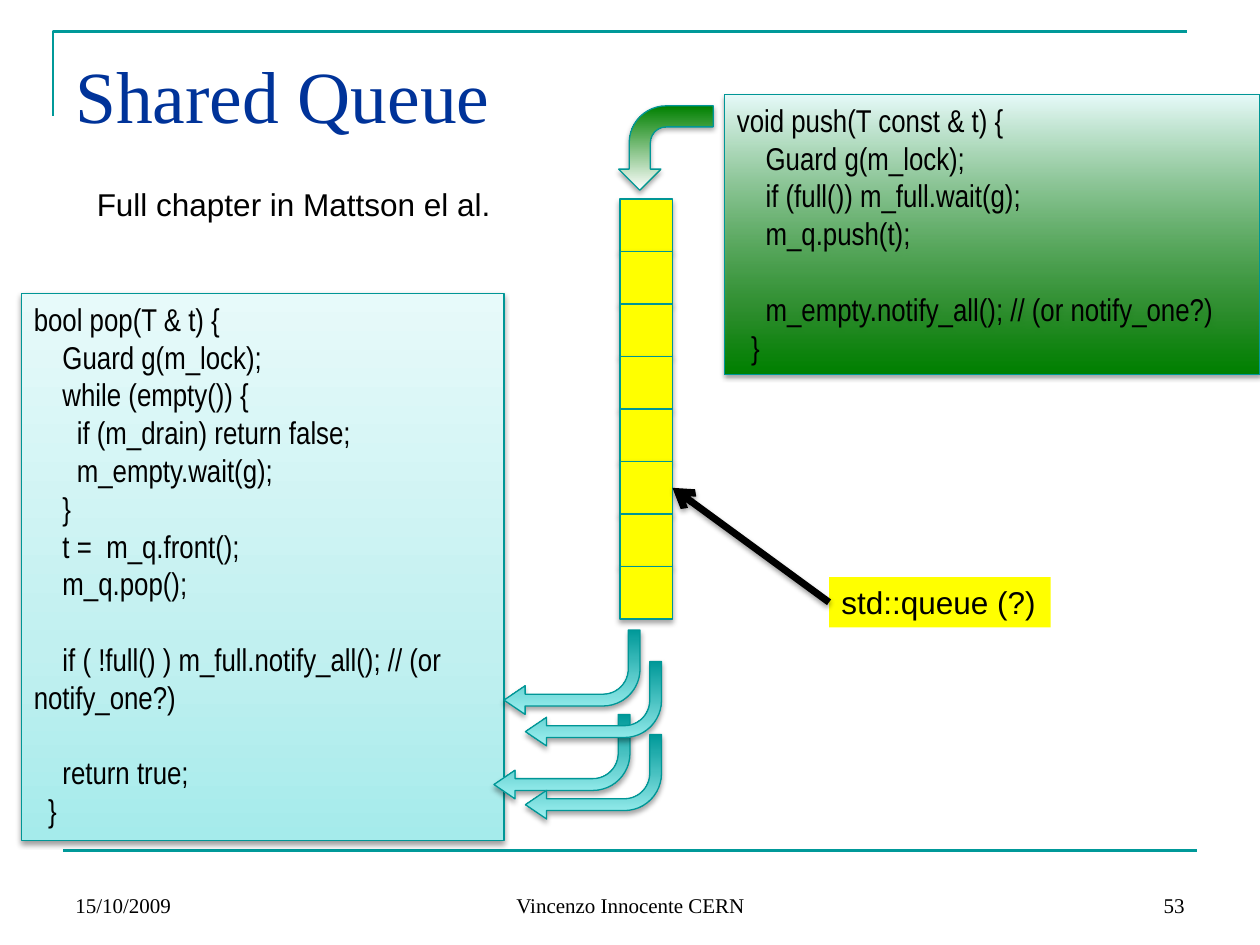
from dataclasses import dataclass

from lxml import etree
from pptx import Presentation
from pptx.dml.color import RGBColor
from pptx.enum.shapes import MSO_CONNECTOR as Connector, MSO_SHAPE as Preset
from pptx.enum.text import MSO_ANCHOR as Anchor, PP_ALIGN as Align
from pptx.oxml.ns import qn
from pptx.util import Inches, Pt

TEAL = RGBColor(0x00, 0x99, 0x99)
EDGE = RGBColor(0x00, 0x96, 0x96)
NAVY = RGBColor(0x00, 0x33, 0x99)
BLACK = RGBColor(0x00, 0x00, 0x00)
WHITE = RGBColor(0xFF, 0xFF, 0xFF)
YELLOW = RGBColor(0xFF, 0xFF, 0x00)
GREEN = RGBColor(0x00, 0x80, 0x00)
ICE = RGBColor(0xE7, 0xFA, 0xFA)
AQUA = RGBColor(0xA5, 0xEB, 0xEB)
PALE_AQUA = RGBColor(0xC1, 0xF0, 0xF0)
LIGHT_TEAL = RGBColor(0x9F, 0xF1, 0xF1)

SERIF, SANS, NARROW = "Times New Roman", "Arial", "Arial Narrow"

PUSH_CODE = """void push(T const & t) {
    Guard g(m_lock);
    if (full()) m_full.wait(g);
    m_q.push(t);

    m_empty.notify_all(); // (or notify_one?)
  }"""
POP_CODE = """bool pop(T & t) {
    Guard g(m_lock);
    while (empty()) {
      if (m_drain) return false;
      m_empty.wait(g);
    }
    t =  m_q.front();
    m_q.pop();

    if ( !full() ) m_full.notify_all(); // (or notify_one?)

    return true;
  }"""


@dataclass
class Frame:
    left: float
    top: float
    width: float
    height: float

    def lengths(self) -> list:
        return [Inches(n) for n in (self.left, self.top, self.width, self.height)]


@dataclass
class Stop:
    percent: int
    color: RGBColor
    alpha: int = 100


@dataclass
class Label:
    text: str
    frame: Frame
    size: int
    font: str
    color: RGBColor = BLACK
    align: Align = Align.LEFT
    anchor: Anchor = Anchor.TOP
    wrap: bool = True


def add_color(parent, color: RGBColor, alpha: int) -> None:
    node = etree.SubElement(parent, qn("a:srgbClr"), val=str(color))
    if alpha < 100:
        etree.SubElement(node, qn("a:alpha"), val=str(alpha * 1000))


def set_gradient(shape, stops: list[Stop], angle: int) -> None:
    shape.fill.background()
    empty = shape._element.spPr.find(qn("a:noFill"))
    gradient = etree.Element(qn("a:gradFill"), rotWithShape="1")
    stop_list = etree.SubElement(gradient, qn("a:gsLst"))
    for stop in stops:
        node = etree.SubElement(stop_list, qn("a:gs"), pos=str(stop.percent * 1000))
        add_color(node, stop.color, stop.alpha)
    etree.SubElement(gradient, qn("a:lin"), ang=str(angle * 60000), scaled="0")
    empty.getparent().replace(empty, gradient)


def set_shadow(properties, alpha: int, distance: float) -> None:
    effects = properties.find(qn("a:effectLst"))
    if effects is None:
        effects = etree.SubElement(properties, qn("a:effectLst"))
    shadow = etree.SubElement(effects, qn("a:outerShdw"), blurRad=str(Pt(3.1)),
                              dist=str(Pt(distance)), dir="5400000", rotWithShape="0")
    add_color(shadow, BLACK, alpha)


def add_outlined(shapes, preset: Preset, frame: Frame, alpha: int = 35, distance: float = 1.8):
    shape = shapes.add_shape(preset, *frame.lengths())
    shape.line.color.rgb = EDGE
    shape.line.width = Pt(0.75)
    shape.shadow.inherit = False
    set_shadow(shape._element.spPr, alpha, distance)
    return shape


def write(shape, label: Label) -> None:
    text_frame = shape.text_frame
    text_frame.word_wrap = label.wrap
    text_frame.vertical_anchor = label.anchor
    text_frame.text = label.text
    for para in text_frame.paragraphs:
        para.alignment = label.align
        para.font.size = Pt(label.size)
        for span in para.runs:
            span.font.size = Pt(label.size)
            span.font.name = label.font
            span.font.color.rgb = label.color


def add_label(page, label: Label):
    box = page.shapes.add_textbox(*label.frame.lengths())
    write(box, label)
    return box


def add_code(page, code: str, frame: Frame, stops: list[Stop]) -> None:
    box = add_outlined(page.shapes, Preset.RECTANGLE, frame, 38, 1.6)
    set_gradient(box, stops, 270)
    write(box, Label(code, frame, 18, NARROW))


def add_line(page, start: tuple, end: tuple, color: RGBColor, width: float):
    line = page.shapes.add_connector(Connector.STRAIGHT, *[Inches(n) for n in start + end])
    line.line.color.rgb = color
    line.line.width = Pt(width)
    etree.SubElement(line._element.spPr, qn("a:effectLst"))
    return line


def main() -> None:
    deck = Presentation()
    deck.slide_width, deck.slide_height = Inches(10), Inches(7.5)
    page = deck.slides.add_slide(deck.slide_layouts[6])

    # Corner rule, bottom rule, title and footer
    builder = page.shapes.build_freeform(Inches(0.42), Inches(0.92))
    builder.add_line_segments([(Inches(0.42), Inches(0.25)), (Inches(9.42), Inches(0.25))],
                              close=False)
    corner = builder.convert_to_shape()
    corner.fill.background()
    corner.line.color.rgb = TEAL
    corner.line.width = Pt(1.5)
    corner.shadow.inherit = False
    add_line(page, (0.5, 6.75), (9.5, 6.75), TEAL, 1.5)
    title = add_label(page, Label("Shared Queue", Frame(0.5, 0.3, 9, 1.25), 42, SERIF, NAVY))
    title.text_frame.margin_top = Inches(0.1)
    for text, left, width, align in (
        ("15/10/2009", 0.5, 2.33, Align.LEFT),
        ("Vincenzo Innocente CERN", 3.42, 3.17, Align.CENTER),
        ("53", 7.17, 2.33, Align.RIGHT),
    ):
        add_label(page, Label(text, Frame(left, 6.83, width, 0.5), 12, SERIF,
                              align=align, anchor=Anchor.BOTTOM))

    # Code blocks
    add_code(page, PUSH_CODE, Frame(5.75, 0.75, 4.25, 2.22),
             [Stop(0, GREEN), Stop(21, GREEN, 76), Stop(100, ICE)])
    add_code(page, POP_CODE, Frame(0.17, 2.33, 3.83, 4.34),
             [Stop(0, AQUA), Stop(35, PALE_AQUA), Stop(100, ICE)])

    # Queue cells
    queue = page.shapes.add_group_shape()
    pitch = 5 / 12
    cells = []
    for row in range(8):
        frame = Frame(4.92, 1.58 + row * pitch, pitch, pitch)
        cell = add_outlined(queue.shapes, Preset.RECTANGLE, frame)
        cell.fill.solid()
        cell.fill.fore_color.rgb = YELLOW
        cells.append(cell)

    # Arrow into the queue
    push_arrow = add_outlined(page.shapes, Preset.BENT_ARROW, Frame(4.95, 0.8, 0.67, 0.75))
    push_arrow.rotation = 270
    push_arrow._element.spPr.find(qn("a:xfrm")).set("flipH", "1")
    set_gradient(push_arrow, [Stop(0, GREEN), Stop(100, WHITE)], 0)

    # Arrows out of the queue
    for left, top in ((4, 5), (3.92, 5.67), (4.17, 5.25), (4.17, 5.83)):
        pop_arrow = add_outlined(page.shapes, Preset.BENT_ARROW, Frame(left, top, 1.08, 0.67))
        pop_arrow.rotation = 180
        for index, value in enumerate((0.14, 0.17, 0.25, 0.44)):
            pop_arrow.adjustments[index] = value
        set_gradient(pop_arrow, [Stop(0, TEAL), Stop(100, LIGHT_TEAL)], 270)

    # Notes beside the queue
    add_label(page, Label("Full chapter in Mattson el al.", Frame(0.67, 1.42, 3.36, 0.4),
                          18, SANS, wrap=False))
    queue_type = add_label(page, Label("std::queue (?)", Frame(6.58, 4.58, 1.76, 0.4),
                                       18, SANS, wrap=False))
    queue_type.fill.solid()
    queue_type.fill.fore_color.rgb = YELLOW
    pointer = add_line(page, (6.58, 4.79), (5.33, 3.88), BLACK, 4)
    pointer.begin_connect(queue_type, 1)
    pointer.end_connect(cells[5], 3)
    etree.SubElement(pointer.line._get_or_add_ln(), qn("a:tailEnd"), type="arrow")
    set_shadow(pointer._element.spPr, 38, 1.6)

    deck.save("out.pptx")


if __name__ == "__main__":
    main()
